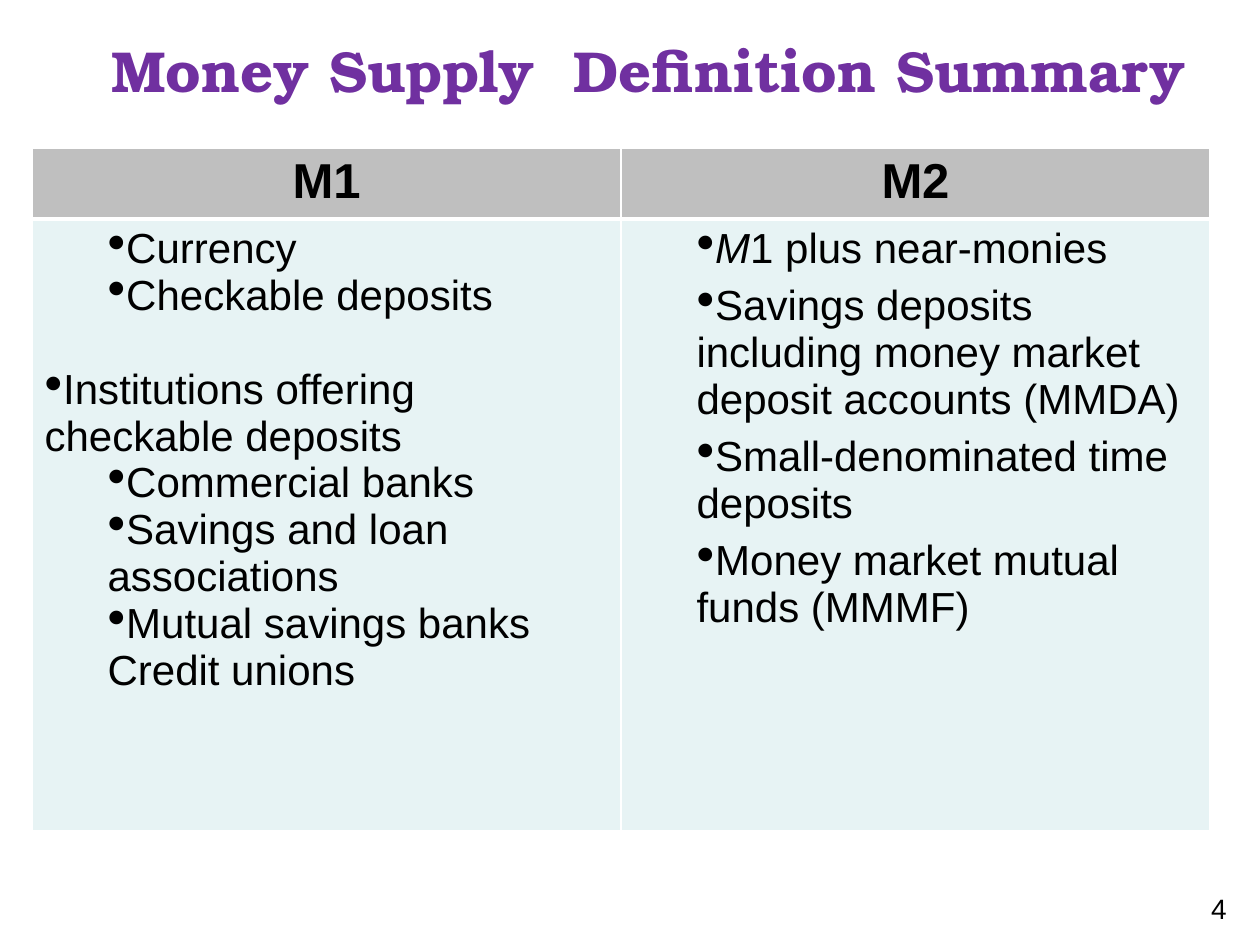
import pptx
import pptx.util
import pptx.dml.color
import pptx.enum.text
import pptx.oxml.ns
import lxml.etree

RGBColor = pptx.dml.color.RGBColor
Pt = pptx.util.Pt
PP_ALIGN = pptx.enum.text.PP_ALIGN
MSO_ANCHOR = pptx.enum.text.MSO_ANCHOR
qn = pptx.oxml.ns.qn

EMU_PER_PX = 914400 / 126
BLACK = RGBColor(0x00, 0x00, 0x00)
WHITE = RGBColor(0xFF, 0xFF, 0xFF)
PURPLE = RGBColor(0x70, 0x30, 0xA0)
GRAY = RGBColor(0xBF, 0xBF, 0xBF)
PALE_TEAL = RGBColor(0xE7, 0xF3, 0xF4)

HEADERS = ["M1", "M2"]
M1_ITEMS = [
    dict(text="Currency"),
    dict(text="Checkable deposits"),
    dict(text="Institutions offering checkable deposits", level=0, before=27),
    dict(text="Commercial banks"),
    dict(text="Savings and loan associations"),
    dict(text="Mutual savings banks"),
    dict(text="Credit unions", bullet=False),
]
M2_ITEMS = [
    dict(text="1 plus near-monies", italic="M", after=6),
    dict(text="Savings deposits including money market deposit accounts (MMDA)", after=6),
    dict(text="Small-denominated time deposits", after=6),
    dict(text="Money market mutual funds (MMMF)", after=6),
]


def px(n):
    return pptx.util.Emu(round(n * EMU_PER_PX))


class SlideBuilder:
    font = "Arial"
    title_font = "TeX Gyre Bonum"
    indent = 63

    def __init__(self, prs):
        self.s = prs.slides.add_slide(prs.slide_layouts[5])

    def style(self, p, size, color=BLACK, bold=False, name=None):
        for r in p.runs:
            r.font.name = name or self.font
            r.font.size = Pt(size)
            r.font.bold = bold
            r.font.color.rgb = color

    def title(self, text, x, y, w, h):
        sp = self.s.shapes.title
        sp.left, sp.top, sp.width, sp.height = px(x), px(y), px(w), px(h)
        tf = sp.text_frame
        tf.text = text
        tf.auto_size = pptx.enum.text.MSO_AUTO_SIZE.NONE
        tf.vertical_anchor = MSO_ANCHOR.MIDDLE
        tf.margin_right = px(33)
        p = tf.paragraphs[0]
        p.alignment = PP_ALIGN.CENTER
        p.line_spacing = 0.9
        self.style(p, 33, PURPLE, True, self.title_font)

    def page_number(self, text, x, y, w, h):
        tf = self.s.shapes.add_textbox(px(x), px(y), px(w), px(h)).text_frame
        tf.text = text
        tf.word_wrap = True
        tf.vertical_anchor = MSO_ANCHOR.MIDDLE
        p = tf.paragraphs[0]
        p.alignment = PP_ALIGN.RIGHT
        self.style(p, 16)

    def table(self, x, y, col_widths, row_heights):
        table = self.s.shapes.add_table(
            len(row_heights), len(col_widths), px(x), px(y),
            px(sum(col_widths)), px(sum(row_heights))).table
        table.first_row = table.horz_banding = False
        for col, w in zip(table.columns, col_widths):
            col.width = px(w)
        for row, h in zip(table.rows, row_heights):
            row.height = px(h)
        return table

    def cell(self, cell, fill, top, bottom):
        tc_pr = cell._tc.get_or_add_tcPr()
        for side, width in dict(L=1, R=1, T=top, B=bottom).items():
            ln = lxml.etree.SubElement(tc_pr, qn(f"a:ln{side}"), w=str(Pt(width)))
            solid = lxml.etree.SubElement(ln, qn("a:solidFill"))
            lxml.etree.SubElement(solid, qn("a:srgbClr"), val=str(WHITE))
        cell.fill.solid()
        cell.fill.fore_color.rgb = fill

    def header(self, cell, text):
        self.cell(cell, GRAY, 1, 3)
        cell.text_frame.text = text
        p = cell.text_frame.paragraphs[0]
        p.alignment = PP_ALIGN.CENTER
        self.style(p, 28, bold=True)

    def items(self, cell, items):
        self.cell(cell, PALE_TEAL, 3, 1)
        tf = cell.text_frame
        for i, item in enumerate(items):
            p = tf.add_paragraph() if i else tf.paragraphs[0]
            self.item(p, **item)

    def item(self, p, text, level=1, bullet=True, italic="", before=0, after=0):
        p.level = level
        p_pr = p._p.get_or_add_pPr()
        p_pr.set("marL", str(px(self.indent * level)))
        p_pr.set("indent", "0")
        if bullet:
            lxml.etree.SubElement(p_pr, qn("a:buSzPct"), val="125000")
            lxml.etree.SubElement(p_pr, qn("a:buChar"), char="•")
        p.space_before = Pt(before)
        p.space_after = Pt(after)
        if italic:
            r = p.add_run()
            r.text = italic
            r.font.italic = True
        p.add_run().text = text
        self.style(p, 24)


def main():
    prs = pptx.Presentation()
    prs.slide_width, prs.slide_height = px(1260), px(945)
    slide = SlideBuilder(prs)
    slide.title("Money Supply  Definition Summary", 58, 32, 1202, 84)
    table = slide.table(32, 148, [589, 589], [71, 612])
    for col, (name, items) in enumerate(zip(HEADERS, [M1_ITEMS, M2_ITEMS])):
        slide.header(table.cell(0, col), name)
        slide.items(table.cell(1, col), items)
    slide.page_number("4", 1155, 892, 84, 32)
    prs.save("out.pptx")


if __name__ == "__main__":
    main()
